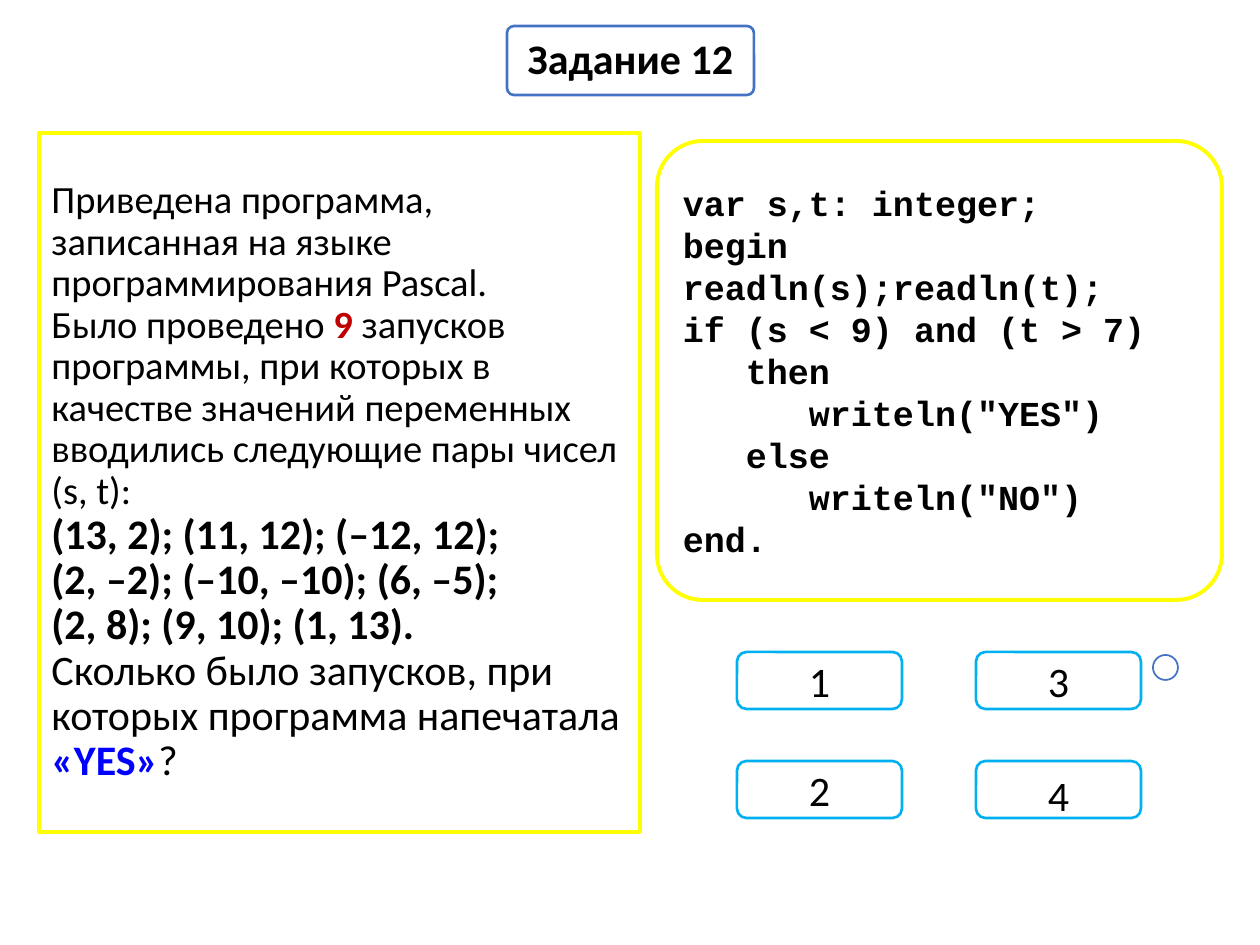
from pptx import Presentation, util as u
from pptx.dml.color import RGBColor
from pptx.enum import shapes, text

BLACK = RGBColor(0, 0, 0)
WHITE = RGBColor(255, 255, 255)
YELLOW = RGBColor(255, 255, 0)
NAVY = RGBColor(0x44, 0x72, 0xC4)
CYAN = RGBColor(0, 0xB0, 0xF0)
RED = RGBColor(0xC0, 0, 0)
BLUE = RGBColor(0, 0, 255)

SCALE = u.Inches(1) / 126
CORNER = 0.1

TASK = [
    ("Приведена программа, записанная на языке программирования Pascal.\n"
     "Было проведено ", 22, False, BLACK),
    ("9", 22, True, RED),
    (" запусков программы, при которых в качестве значений переменных "
     "вводились следующие пары чисел (s, t):\n", 22, False, BLACK),
    ("(13, 2); (11, 12); (–12, 12);\n(2, –2); (–10, –10); (6, –5);\n"
     "(2, 8); (9, 10); (1, 13).\n", 24, True, BLACK),
    ("Сколько было запусков, при которых программа напечатала ", 24, False, BLACK),
    ("«YES»", 24, True, BLUE),
    ("?", 24, False, BLACK),
]

PROGRAM = """var s,t: integer;
begin
readln(s);readln(t);
if (s < 9) and (t > 7)
   then
      writeln("YES")
   else
      writeln("NO")
end."""


def px(length):
    return u.Emu(round(length * SCALE))


class SlideBuilder:
    font = "Calibri"
    code_font = "Courier New"

    def __init__(self, presentation):
        self.slide = presentation.slides.add_slide(presentation.slide_layouts[6])

    def outline(self, kind, box, color, width):
        shape = self.slide.shapes.add_shape(kind, *map(px, box))
        shape.shadow.inherit = False
        shape.fill.solid()
        shape.fill.fore_color.rgb = WHITE
        shape.line.color.rgb = color
        shape.line.width = u.Pt(width)
        frame = shape.text_frame
        frame.word_wrap = True
        frame.vertical_anchor = text.MSO_ANCHOR.MIDDLE
        return shape

    def style(self, font, size, bold=False, color=BLACK, name=font):
        font.name = name
        font.size = u.Pt(size)
        font.bold = bold
        font.color.rgb = color

    def label(self, box, words, color, bold=False, spacing=1.0, corner=None):
        shape = self.outline(shapes.MSO_SHAPE.ROUNDED_RECTANGLE, box, color, 1.5)
        if corner:
            shape.adjustments[0] = corner
        paragraph = shape.text_frame.paragraphs[0]
        paragraph.text = words
        paragraph.alignment = text.PP_ALIGN.CENTER
        paragraph.line_spacing = spacing
        self.style(paragraph.font, 24, bold)

    def rich_text(self, box, pieces):
        shape = self.outline(shapes.MSO_SHAPE.RECTANGLE, box, YELLOW, 2.25)
        paragraph = shape.text_frame.paragraphs[0]
        paragraph.alignment = text.PP_ALIGN.LEFT
        paragraph.line_spacing = 0.9
        for words, size, bold, color in pieces:
            for index, line in enumerate(words.split("\n")):
                if index:
                    paragraph.add_line_break()
                if line:
                    run = paragraph.add_run()
                    run.text = line
                    self.style(run.font, size, bold, color)

    def code(self, box, listing):
        shape = self.outline(shapes.MSO_SHAPE.ROUNDED_RECTANGLE, box, YELLOW, 2.25)
        shape.adjustments[0] = CORNER
        shape.text_frame.text = listing
        for paragraph in shape.text_frame.paragraphs:
            paragraph.alignment = text.PP_ALIGN.LEFT
            self.style(paragraph.font, 20, True, name=self.code_font)

    def circle(self, left, top, diameter):
        box = (left, top, diameter, diameter)
        self.outline(shapes.MSO_SHAPE.OVAL, box, NAVY, 1)


def main():
    presentation = Presentation()
    presentation.slide_width = px(1260)
    presentation.slide_height = px(945)
    builder = SlideBuilder(presentation)

    builder.label((507, 26, 247, 69), "Задание 12", NAVY,
                  bold=True, spacing=0.9, corner=CORNER)
    builder.rich_text((39, 133, 601, 699), TASK)
    builder.code((657, 141, 565, 459), PROGRAM)
    for index, answer in enumerate("1234"):
        column, row = divmod(index, 2)
        box = (737 + 239 * column, 652 + 109 * row, 165, 57)
        builder.label(box, answer, CYAN, spacing=1.2 if answer == "4" else 1.0)
    builder.circle(1153, 655, 25)

    presentation.save("out.pptx")


if __name__ == "__main__":
    main()
